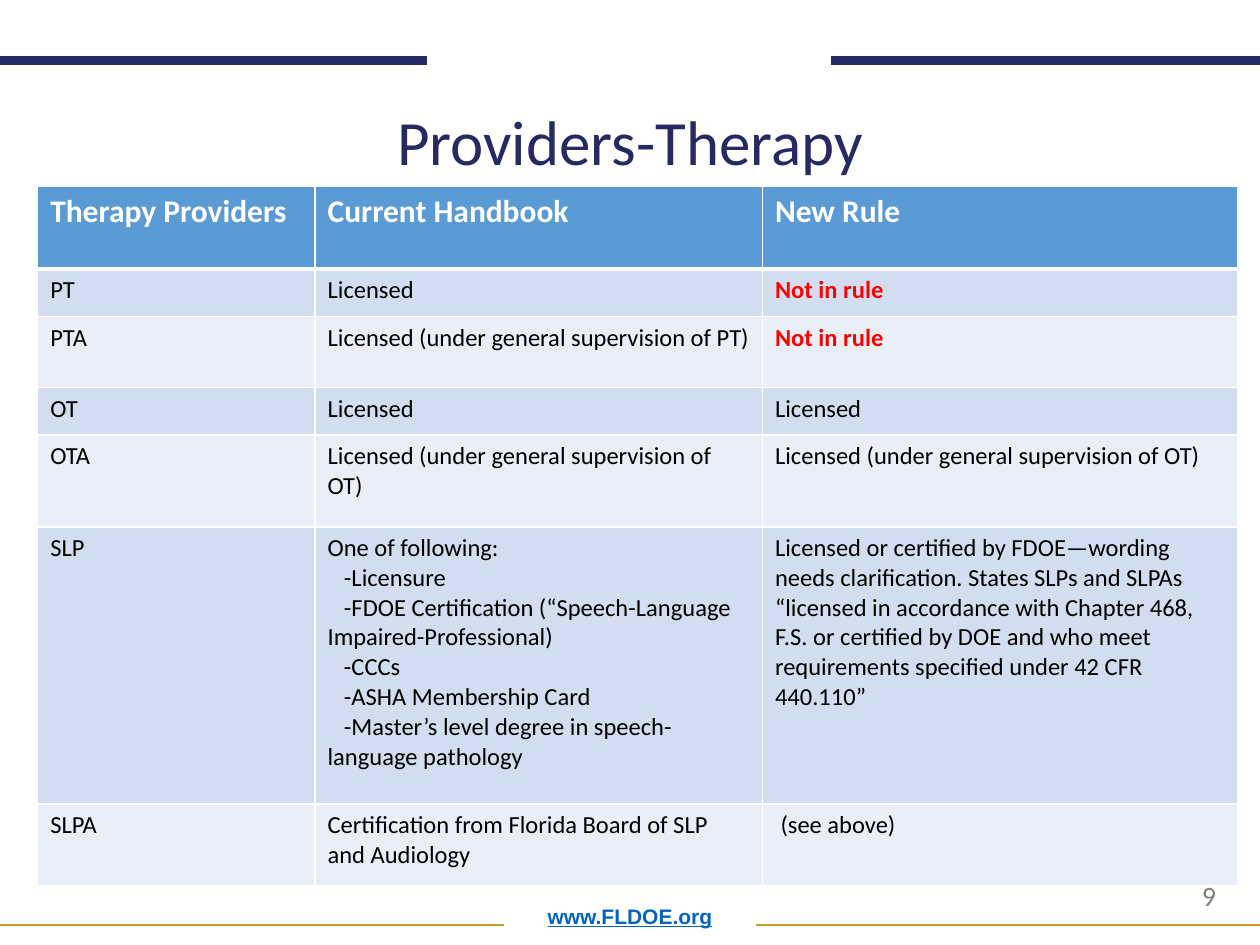
"""Build the Providers-Therapy comparison slide."""
from dataclasses import dataclass

from lxml import etree
from pptx import Presentation
from pptx import util as u
from pptx.dml.color import RGBColor
from pptx.enum import shapes, text
from pptx.oxml import ns

NAVY, GOLD, WHITE, BLACK, RED = "262A63", "CD9D2C", "FFFFFF", "000000", "FF0000"
HEADER_FILL, BAND_FILLS = "5B9BD5", ("D2DEEF", "EAEFF7")
COLUMN_WIDTHS = (5.59, 9.02, 9.58)
LIST_INDENT, NOTE_INDENT = 0.33, 0.11


@dataclass
class Rule:
    start: float
    end: float
    y: float
    color: str
    width: float


@dataclass
class Line:
    text: str
    indent: float = 0
    color: str = BLACK
    bold: bool = False


@dataclass
class Row:
    height: float
    cells: tuple


RULES = (
    Rule(0, 8.61, 1.22, NAVY, 5),
    Rule(16.76, 25.4, 1.22, NAVY, 5),
    Rule(0, 10.16, 18.64, GOLD, 1),
    Rule(15.24, 25.4, 18.64, GOLD, 1),
)

NOT_IN_RULE = Line("Not in rule", color=RED, bold=True)
SLP_OPTIONS = (
    "-Licensure",
    "-FDOE Certification (“Speech-Language Impaired-Professional)",
    "-CCCs",
    "-ASHA Membership Card",
    "-Master’s level degree in speech-language pathology",
)
SLP_RULE = (
    "Licensed or certified by FDOE—wording needs clarification. States SLPs and SLPAs "
    "“licensed in accordance with Chapter 468, F.S. or certified by DOE and who meet "
    "requirements specified under 42 CFR 440.110”"
)
OT_SUPERVISION = "Licensed (under general supervision of OT)"

HEADER = Row(1.66, tuple(
    [Line(label, color=WHITE, bold=True)]
    for label in ("Therapy Providers", "Current Handbook", "New Rule")
))
PROVIDERS = (
    Row(0.96, ([Line("PT")], [Line("Licensed")], [NOT_IN_RULE])),
    Row(1.43, ([Line("PTA")], [Line("Licensed (under general supervision of PT)")],
               [NOT_IN_RULE])),
    Row(0.96, ([Line("OT")], [Line("Licensed")], [Line("Licensed")])),
    Row(1.85, ([Line("OTA")], [Line(OT_SUPERVISION)], [Line(OT_SUPERVISION)])),
    Row(5.59, ([Line("SLP")],
               [Line("One of following:")]
               + [Line(option, LIST_INDENT) for option in SLP_OPTIONS],
               [Line(SLP_RULE)])),
    Row(1.64, ([Line("SLPA")],
               [Line("Certification from Florida Board of SLP and Audiology")],
               [Line("(see above)", NOTE_INDENT)])),
)


def rgb(value: str) -> RGBColor:
    return RGBColor.from_string(value)


def style(p, size: float, color: str, bold: bool = False, name: str = "Calibri") -> None:
    p.font.name, p.font.size, p.font.bold = name, u.Pt(size), bold
    p.font.color.rgb = rgb(color)


def box(*lengths: float) -> list:
    return [u.Cm(length) for length in lengths]


def draw_rule(s, rule: Rule) -> None:
    line = s.shapes.add_connector(
        shapes.MSO_CONNECTOR.STRAIGHT, *box(rule.start, rule.y, rule.end, rule.y))
    line.line.color.rgb = rgb(rule.color)
    line.line.width = u.Pt(rule.width)
    etree.SubElement(line._element.spPr, ns.qn("a:effectLst"))


def draw_title(s, title: str) -> None:
    sp = s.shapes.title
    sp.left, sp.top, sp.width, sp.height = box(1.75, 2.29, 21.9, 1.45)
    tf = sp.text_frame
    tf.text = title
    tf.auto_size = text.MSO_AUTO_SIZE.NONE
    tf.vertical_anchor = text.MSO_ANCHOR.BOTTOM
    p = tf.paragraphs[0]
    p.alignment, p.line_spacing = text.PP_ALIGN.CENTER, 0.9
    style(p, 36, NAVY)


def add_label(s, label: str, *place: float):
    tf = s.shapes.add_textbox(*box(*place)).text_frame
    tf.word_wrap = True
    tf.text = label
    return tf


def set_borders(cell, top: float, bottom: float) -> None:
    tc_pr = cell._tc.get_or_add_tcPr()
    for side, width in (("L", 1), ("R", 1), ("T", top), ("B", bottom)):
        ln = etree.SubElement(tc_pr, ns.qn(f"a:ln{side}"), w=str(u.Pt(width)))
        fill = etree.SubElement(ln, ns.qn("a:solidFill"))
        etree.SubElement(fill, ns.qn("a:srgbClr"), val=WHITE)


def fill_cell(cell, lines: list, fill: str, size: float) -> None:
    cell.fill.solid()
    cell.fill.fore_color.rgb = rgb(fill)
    tf = cell.text_frame
    for i, line in enumerate(lines):
        p = tf.add_paragraph() if i else tf.paragraphs[0]
        p.text = line.text
        if line.indent:
            p._p.get_or_add_pPr().set("indent", str(u.Cm(line.indent)))
        style(p, size, line.color, line.bold)


def draw_table(s) -> None:
    rows = (HEADER, *PROVIDERS)
    height = sum(row.height for row in rows)
    table = s.shapes.add_table(
        len(rows), len(COLUMN_WIDTHS),
        *box(0.76, 3.76, sum(COLUMN_WIDTHS), height)).table
    for column, width in zip(table.columns, COLUMN_WIDTHS):
        column.width = u.Cm(width)
    for i, row in enumerate(rows):
        table.rows[i].height = u.Cm(row.height)
        fill = BAND_FILLS[(i - 1) % 2] if i else HEADER_FILL
        for j, lines in enumerate(row.cells):
            cell = table.cell(i, j)
            set_borders(cell, 3 if i == 1 else 1, 1 if i else 3)
            fill_cell(cell, lines, fill, 14 if i else 18)


def main() -> None:
    prs = Presentation()
    prs.slide_width, prs.slide_height = box(25.4, 19.05)
    s = prs.slides.add_slide(prs.slide_layouts[5])
    for rule in RULES:
        draw_rule(s, rule)

    tf = add_label(s, "www.FLDOE.org", 1.75, 17.78, 21.9, 1.07)
    tf.vertical_anchor = text.MSO_ANCHOR.BOTTOM
    p = tf.paragraphs[0]
    p.alignment, p.line_spacing = text.PP_ALIGN.CENTER, 0.9
    style(p, 12, "0563C1", True, "Arial")
    p.font.underline = True

    tf = add_label(s, "9", 23.98, 17.58, 1.32, 0.94)
    style(tf.paragraphs[0], 16, "7F7F7F")

    draw_table(s)
    draw_title(s, "Providers-Therapy")
    prs.save("out.pptx")


if __name__ == "__main__":
    main()
